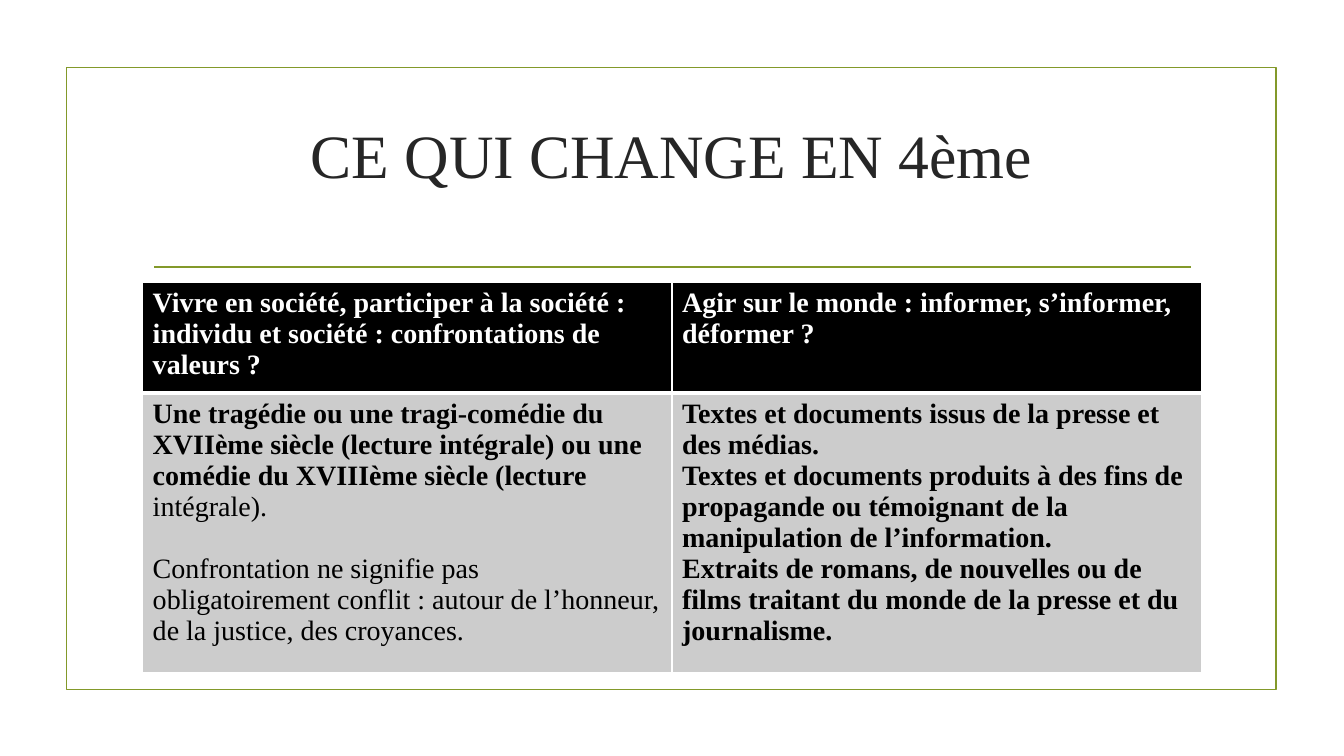
from lxml import etree
from pptx import Presentation
from pptx.dml.color import RGBColor
from pptx.enum import shapes, text
from pptx.oxml.ns import qn
from pptx.util import Inches, Pt

FONT = "Times New Roman"
GREEN, WHITE, BLACK, GREY, TITLE_COLOR = "83992A", "FFFFFF", "000000", "CCCCCC", "262626"
TITLE = "CE QUI CHANGE EN 4ème"
LINE_GAP = 22

# Each cell is a list of paragraphs; each paragraph is a list of (text, bold) runs.
HEADERS = [
    [[("Vivre en société, participer à la société : individu et société : "
       "confrontations de valeurs ?", True)]],
    [[("Agir sur le monde : informer, s’informer, déformer ?", True)]],
]
THEMES = [
    [[("Une tragédie ou une tragi-comédie du XVIIème siècle (lecture intégrale) ou une "
       "comédie du XVIIIème siècle (lecture ", True), ("intégrale).", False)],
     [("Confrontation ne signifie pas obligatoirement conflit : autour de l’honneur, "
       "de la justice, des croyances.", False)]],
    [[("Textes et documents issus de la presse et des médias.", True)],
     [("Textes et documents produits à des fins de propagande ou témoignant de la "
       "manipulation de l’information.", True)],
     [("Extraits de romans, de nouvelles ou de films traitant du monde de la presse "
       "et du journalisme.", True)]],
]
# content, row height, fill, text colour, bottom border, paragraph gap per column
ROWS = [
    (HEADERS, 1.02, BLACK, WHITE, 3, (0, 0)),
    (THEMES, 2.56, GREY, BLACK, 1, (LINE_GAP, 0)),
]
SLIDE_WIDTH, SLIDE_HEIGHT = 13.33, 7.5
CONTENT_WIDTH = 10.5
CONTENT_LEFT = (SLIDE_WIDTH - CONTENT_WIDTH) / 2
TABLE_TOP = 2.8


def color(value):
    return RGBColor.from_string(value)


def set_font(font, size, value):
    font.name, font.size, font.color.rgb = FONT, Pt(size), color(value)


def set_borders(cell, bottom_width):
    """White borders: 1 pt at the sides and top, a chosen width below."""
    properties = cell._tc.get_or_add_tcPr()
    for position, (side, width) in enumerate(
            [("L", 1), ("R", 1), ("T", 1), ("B", bottom_width)]):
        border = etree.Element(qn(f"a:ln{side}"), w=str(Pt(width)))
        fill = etree.SubElement(border, qn("a:solidFill"))
        etree.SubElement(fill, qn("a:srgbClr"), val=WHITE)
        properties.insert(position, border)


def fill_cell(cell, paragraphs, fill, text_color, bottom_width, gap):
    cell.fill.solid()
    cell.fill.fore_color.rgb = color(fill)
    set_borders(cell, bottom_width)
    for index, runs in enumerate(paragraphs):
        frame = cell.text_frame
        paragraph = frame.add_paragraph() if index else frame.paragraphs[0]
        if index and gap:
            paragraph.space_before = Pt(gap)
        set_font(paragraph.font, 20, text_color)
        for words, bold in runs:
            run = paragraph.add_run()
            run.text = words
            set_font(run.font, 20, text_color)
            run.font.bold = bold


def add_frame(slide):
    frame = slide.shapes.add_shape(
        shapes.MSO_SHAPE.RECTANGLE, Inches(0.66), Inches(0.67), Inches(12), Inches(6.17))
    frame.shadow.inherit = False
    frame.fill.background()
    frame.line.color.rgb = color(GREEN)
    frame.line.width = Pt(1.25)


def add_rule(slide):
    rule = slide.shapes.add_connector(
        shapes.MSO_CONNECTOR.STRAIGHT,
        Inches(1.53), Inches(2.65), Inches(11.81), Inches(2.65))
    rule.line.color.rgb = color(GREEN)
    rule.line.width = Pt(1.25)
    etree.SubElement(rule._element.spPr, qn("a:effectLst"))


def add_title(slide):
    box = slide.shapes.add_textbox(
        Inches(CONTENT_LEFT), Inches(1.07), Inches(CONTENT_WIDTH), Inches(0.91))
    frame = box.text_frame
    frame.word_wrap = True
    frame.vertical_anchor = text.MSO_ANCHOR.MIDDLE
    paragraph = frame.paragraphs[0]
    paragraph.text = TITLE
    paragraph.alignment = text.PP_ALIGN.CENTER
    set_font(paragraph.font, 44, TITLE_COLOR)


def add_themes_table(slide):
    height = sum(row[1] for row in ROWS)
    table = slide.shapes.add_table(
        len(ROWS), len(HEADERS), Inches(CONTENT_LEFT), Inches(TABLE_TOP),
        Inches(CONTENT_WIDTH), Inches(height)).table
    for row, (cells, row_height, fill, text_color, bottom, gaps) in enumerate(ROWS):
        table.rows[row].height = Inches(row_height)
        for column, (paragraphs, gap) in enumerate(zip(cells, gaps)):
            fill_cell(table.cell(row, column), paragraphs, fill, text_color, bottom, gap)


def main():
    presentation = Presentation()
    presentation.slide_width = Inches(SLIDE_WIDTH)
    presentation.slide_height = Inches(SLIDE_HEIGHT)
    slide = presentation.slides.add_slide(presentation.slide_layouts[6])
    add_frame(slide)
    add_rule(slide)
    add_title(slide)
    add_themes_table(slide)
    presentation.save("out.pptx")


if __name__ == "__main__":
    main()
